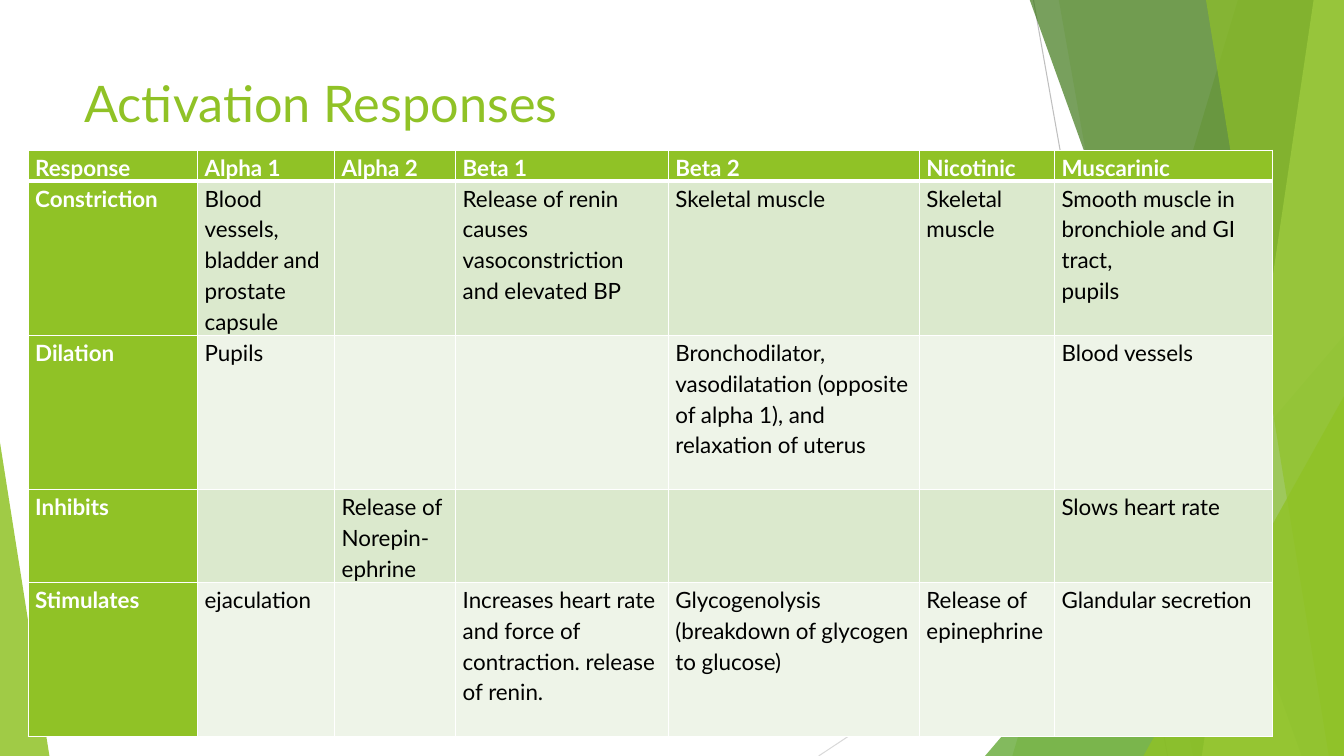
from dataclasses import dataclass

from lxml.etree import SubElement
from pptx import Presentation
from pptx.dml.color import RGBColor
from pptx.enum.shapes import MSO_CONNECTOR as Connector, MSO_SHAPE as Shape
from pptx.enum.text import MSO_ANCHOR as Anchor
from pptx.oxml.ns import qn
from pptx.util import Inches, Pt


@dataclass(frozen=True)
class Theme:
    font: str = "Lato"
    title_size: int = 36
    table_size: int = 16
    green: str = "90C226"
    mid_green: str = "54A021"
    dark_green: str = "3F7819"
    light_green: str = "C0E474"
    row_tints: tuple = ("DBE9CD", "EEF4E8")
    white: str = "FFFFFF"
    black: str = "000000"
    gray: str = "BFBFBF"
    light_gray: str = "D9D9D9"


theme = Theme()


def write_text(text_frame, text, size, color, bold=False, line_spacing=1.0):
    """Write one paragraph per line of text."""
    text_frame.word_wrap = True
    for index, line in enumerate(text.split("\n")):
        paragraph = text_frame.add_paragraph() if index else text_frame.paragraphs[0]
        paragraph.line_spacing = line_spacing
        run = paragraph.add_run()
        run.text = line
        run.font.name = theme.font
        run.font.size = Pt(size)
        run.font.bold = bold
        run.font.color.rgb = RGBColor.from_string(color)


def set_border(cell, side, width):
    """Give one side of a cell a white line; call in the order L, R, T, B."""
    line = SubElement(cell._tc.get_or_add_tcPr(), qn(f"a:ln{side}"), w=str(Pt(width)))
    fill = SubElement(line, qn("a:solidFill"))
    SubElement(fill, qn("a:srgbClr"), val=theme.white)


presentation = Presentation()
presentation.slide_width = Inches(13.33)
presentation.slide_height = Inches(7.5)
slide = presentation.slides.add_slide(presentation.slide_layouts[6])
shapes = slide.shapes

# Thin background lines
for start_x, start_y, end_x, end_y, color in [
    (10.25, 0, 11.58, 7.5, theme.gray),
    (13.33, 4.03, 8.12, 7.5, theme.light_gray),
]:
    connector = shapes.add_connector(
        Connector.STRAIGHT, Inches(start_x), Inches(start_y), Inches(end_x), Inches(end_y))
    connector.line.color.rgb = RGBColor.from_string(color)
    connector.line.width = Pt(0.75)
    SubElement(connector._element.spPr, qn("a:effectLst"))

# Translucent facets, back to front: a band is (top x, bottom x) and runs to
# the right edge; a triangle is (left, top, width, height, peak position)
facets = [
    ((12.28, 10.04), theme.green, 30),
    ((10.5, 11.83), theme.green, 20),
    ((9.77, 3.33, 3.56, 4.17, 1), theme.mid_green, 72),
    ((10.21, 12.91), theme.dark_green, 70),
    ((13.03, 11.92), theme.light_green, 70),
    ((11.96, 13.18), theme.green, 65),
    ((11.34, 3.93, 1.99, 3.57, 1), theme.green, 80),
    ((0, 4.39, 0.49, 3.11, 0), theme.green, 85),
]
for geometry, color, opacity in facets:
    if len(geometry) == 2:
        top_x, bottom_x = geometry
        outline = shapes.build_freeform(Inches(top_x), Inches(-0.01))
        corners = [(13.33, -0.01), (13.33, 7.5), (bottom_x, 7.5)]
        outline.add_line_segments([(Inches(x), Inches(y)) for x, y in corners])
        facet = outline.convert_to_shape()
    else:
        *box, peak = geometry
        facet = shapes.add_shape(Shape.ISOSCELES_TRIANGLE, *map(Inches, box))
        facet.adjustments[0] = peak
    facet.shadow.inherit = False
    facet.line.fill.background()
    facet.fill.solid()
    facet.fill.fore_color.rgb = RGBColor.from_string(color)
    color_element = facet._element.spPr.find(qn("a:solidFill"))[0]
    SubElement(color_element, qn("a:alpha"), val=str(opacity * 1000))

# Title
title = shapes.add_textbox(Inches(0.74), Inches(0.67), Inches(9.4), Inches(1.44))
title.text_frame.vertical_anchor = Anchor.TOP
write_text(title.text_frame, "Activation Responses", theme.title_size, theme.green)

# Response table
responses = [
    ["Response", "Alpha 1", "Alpha 2", "Beta 1", "Beta 2", "Nicotinic", "Muscarinic"],
    ["Constriction", "Blood vessels, bladder and prostate capsule", "",
     "Release of renin causes vasoconstriction and elevated BP", "Skeletal muscle",
     "Skeletal muscle", "Smooth muscle in bronchiole and GI tract,\npupils"],
    ["Dilation", "Pupils", "", "",
     "Bronchodilator, vasodilatation (opposite of alpha 1), and relaxation of uterus",
     "", "Blood vessels"],
    ["Inhibits", "", "Release of Norepin-ephrine", "", "", "", "Slows heart rate"],
    ["Stimulates", "ejaculation", "",
     "Increases heart rate and force of contraction. release of renin.",
     "Glycogenolysis (breakdown of glycogen to glucose)",
     "Release of epinephrine", "Glandular secretion"],
]
column_widths = [1.68, 1.36, 1.2, 2.11, 2.49, 1.34, 2.16]
row_heights = [0.3, 1.53, 1.53, 0.92, 1.53]

table = shapes.add_table(
    len(row_heights), len(column_widths), Inches(0.28), Inches(1.49),
    Inches(sum(column_widths)), Inches(sum(row_heights))).table
table.horz_banding = False
for column, width in zip(table.columns, column_widths):
    column.width = Inches(width)
for row, height in zip(table.rows, row_heights):
    row.height = Inches(height)

for row_index, row_texts in enumerate(responses):
    for column_index, text in enumerate(row_texts):
        cell = table.cell(row_index, column_index)
        is_heading = row_index == 0 or column_index == 0
        cell.margin_left = cell.margin_right = Inches(0.07)
        cell.margin_top = cell.margin_bottom = 0
        if text:
            write_text(cell.text_frame, text, theme.table_size,
                       theme.white if is_heading else theme.black,
                       bold=is_heading, line_spacing=1.15)
        # The rule under the header row is thicker
        set_border(cell, "L", 1)
        set_border(cell, "R", 1)
        set_border(cell, "T", 3 if row_index == 1 else 1)
        set_border(cell, "B", 3 if row_index == 0 else 1)
        fill_color = theme.green if is_heading else theme.row_tints[(row_index - 1) % 2]
        cell.fill.solid()
        cell.fill.fore_color.rgb = RGBColor.from_string(fill_color)

presentation.save("out.pptx")
